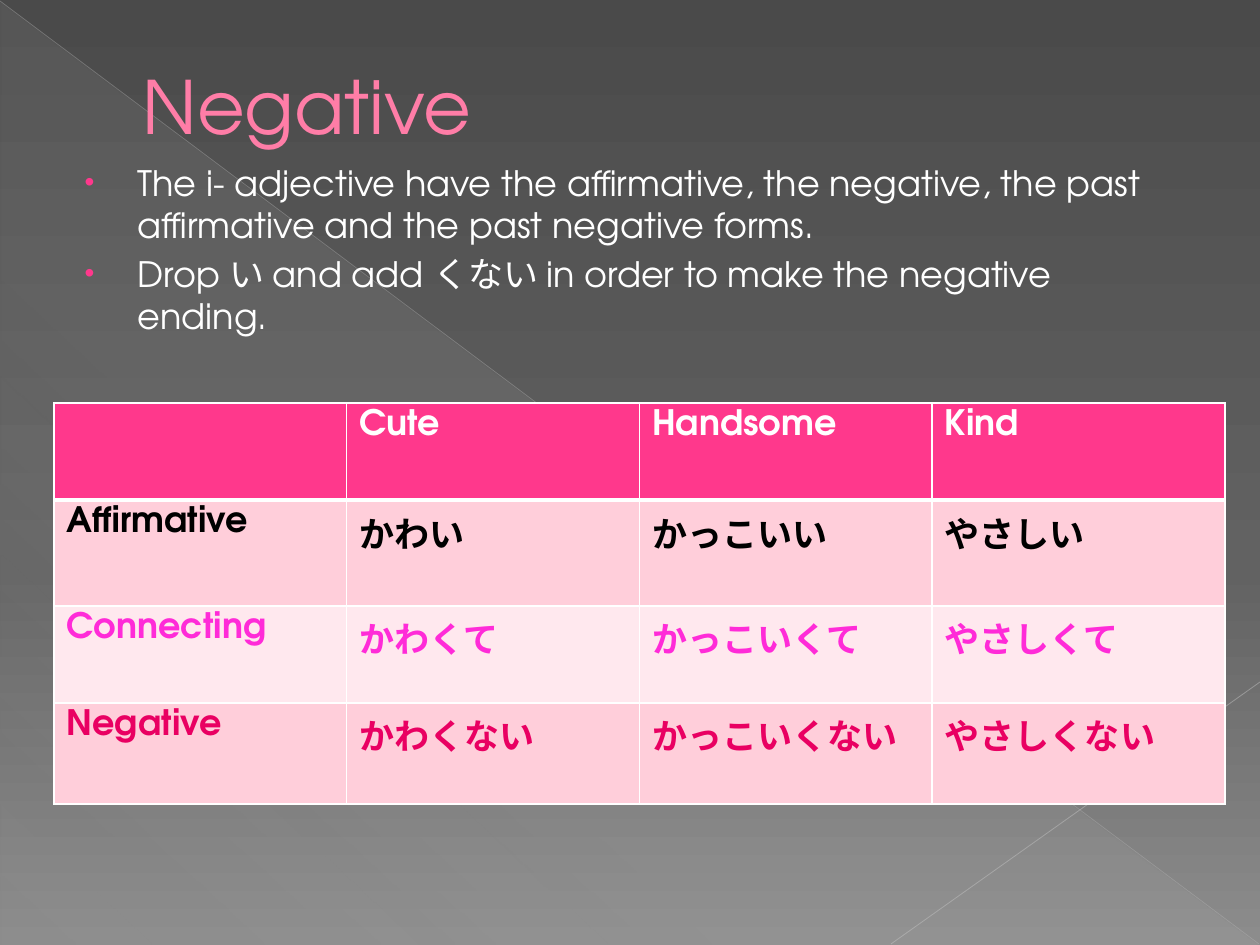
from lxml.etree import SubElement
from pptx import Presentation
from pptx.dml.color import RGBColor
from pptx.enum.shapes import MSO_CONNECTOR, MSO_SHAPE
from pptx.enum.text import MSO_ANCHOR, MSO_AUTO_SIZE, PP_ALIGN
from pptx.oxml.ns import qn
from pptx.util import Emu, Pt

SCALE = 914400 / 126
FONT = "TeX Gyre Adventor"
WHITE = RGBColor(0xFF, 0xFF, 0xFF)
BLACK = RGBColor(0x00, 0x00, 0x00)
PINK = RGBColor(0xFF, 0x38, 0x8C)
ROSE = RGBColor(0xFF, 0x7D, 0xA7)
WINE = RGBColor(0xB1, 0x27, 0x61)
BLUSH = RGBColor(0xFF, 0xCE, 0xDA)
PALE = RGBColor(0xFF, 0xE8, 0xEE)
VIOLET = RGBColor(0xFF, 0x2B, 0xD8)
RED = RGBColor(0xE9, 0x00, 0x62)
DARK = RGBColor(0x4A, 0x4A, 0x4A)
MID = RGBColor(0x62, 0x62, 0x62)
LIGHT = RGBColor(0x8C, 0x8C, 0x8C)
MIST = RGBColor(0xD2, 0xD2, 0xD2)
GREY = RGBColor(0xBF, 0xBF, 0xBF)
SILVER = RGBColor(0xC6, 0xC6, 0xC6)

POINTS = [
    "The i- adjective have the affirmative, the negative, the past "
    "affirmative and the past negative forms.",
    "Drop い and add くない in order to make the negative ending.",
]
# Each row: height, fill, text colour, cells
ROWS = [
    (97, PINK, WHITE, ["", "Cute", "Handsome", "Kind"]),
    (106, BLUSH, BLACK, ["Affirmative", "かわい", "かっこいい", "やさしい"]),
    (97, PALE, VIOLET, ["Connecting", "かわくて", "かっこいくて", "やさしくて"]),
    (101, BLUSH, RED, ["Negative", "かわくない", "かっこいくない", "やさしくない"]),
]


def px(n):
    return Emu(round(n * SCALE))


def add_tag(parent, tag, **attrs):
    return SubElement(parent, qn(tag), {k: str(v) for k, v in attrs.items()})


def add_color(parent, color, alpha=100):
    node = add_tag(parent, "a:srgbClr", val=color)
    if alpha < 100:
        add_tag(node, "a:alpha", val=alpha * 1000)


def add_line(parent, tag, color, width):
    line = add_tag(parent, tag, w=Pt(width))
    add_color(add_tag(line, "a:solidFill"), color)
    return line


def set_grad(fill, root, stops, angle):
    fill.gradient()
    grad = next(root.iter(qn("a:gradFill")))
    for child in list(grad):
        grad.remove(child)
    group = add_tag(grad, "a:gsLst")
    for spot, color, alpha in stops:
        add_color(add_tag(group, "a:gs", pos=spot * 1000), color, alpha)
    add_tag(grad, "a:lin", ang=angle * 60000, scaled=0)


def add_run(para, text, size, color, bold=False):
    run = para.add_run()
    run.text = text
    font = run.font
    font.name, font.size, font.bold = FONT, Pt(size), bold
    font.color.rgb = color
    return run


def place(shape, box):
    shape.left, shape.top, shape.width, shape.height = map(px, box)


def draw_back(slide, box):
    x, y, w, h = box
    set_grad(slide.background.fill, slide.element,
             [(0, DARK, 100), (60, MID, 100), (100, LIGHT, 100)], 90)

    # Pale corner
    corner = slide.shapes.add_shape(
        MSO_SHAPE.RIGHT_TRIANGLE, px(x + 1), px(y + 2), px(w - 2), px(h - 2))
    corner.shadow.inherit = False
    corner.line.fill.background()
    set_grad(corner.fill, corner.element,
             [(0, MIST, 10), (70, MIST, 8), (100, MIST, 1)], 133)
    parts = [corner]

    # Crossing hairlines
    for x1, y1, x2, y2, color, width, alpha in [
            (0, 1, w - 1, h - 1, GREY, 0.39, 35),
            (w, 682, 891, h - 1, SILVER, 0.47, 45)]:
        line = slide.shapes.add_connector(
            MSO_CONNECTOR.STRAIGHT, px(x + x1), px(y + y1), px(x + x2), px(y + y2))
        line.line.color.rgb = color
        line.line.width = Pt(width)
        add_tag(next(line.element.iter(qn("a:srgbClr"))), "a:alpha", val=alpha * 1000)
        add_tag(line.element.spPr, "a:effectLst")
        parts.append(line)

    # Keep the backdrop behind the placeholders
    tree = corner.element.getparent()
    for i, part in enumerate(parts):
        tree.insert(2 + i, part.element)


def fill_title(title, box):
    place(title, box)
    frame = title.text_frame
    frame.vertical_anchor = MSO_ANCHOR.MIDDLE
    frame.auto_size = MSO_AUTO_SIZE.NONE
    para = frame.paragraphs[0]
    para.alignment = PP_ALIGN.LEFT
    props = para._p.get_or_add_pPr()
    props.set("marL", str(px(67)))
    run = add_run(para, "Negative", 42, ROSE)
    font = run._r.get_or_add_rPr()
    font.insert(0, add_line(font, "a:ln", WINE, 0.5))


def fill_body(body, box):
    place(body, box)
    frame = body.text_frame
    frame.auto_size = MSO_AUTO_SIZE.NONE
    for i, text in enumerate(POINTS):
        para = frame.add_paragraph() if i else frame.paragraphs[0]
        props = para._p.get_or_add_pPr()
        props.set("marL", str(px(62)))
        props.set("indent", str(px(-53)))
        add_tag(add_tag(props, "a:spcBef"), "a:spcPct", val=20000)
        add_color(add_tag(props, "a:buClr"), PINK)
        add_tag(props, "a:buSzPct", val=80000)
        add_tag(props, "a:buChar", char="•")
        add_run(para, text, 20, WHITE)


def fill_cell(cell, text, color, fill, base):
    if text:
        add_run(cell.text_frame.paragraphs[0], text, 20, color, True)
    props = cell._tc.get_or_add_tcPr()
    for tag, width in [("a:lnL", 1), ("a:lnR", 1), ("a:lnT", 1), ("a:lnB", base)]:
        add_line(props, tag, WHITE, width)
    cell.fill.solid()
    cell.fill.fore_color.rgb = fill


def draw_table(slide, box):
    count = len(ROWS[0][3])
    table = slide.shapes.add_table(len(ROWS), count, *map(px, box)).table
    for col in table.columns:
        col.width = px(box[2] / count)
    for r, (height, fill, color, words) in enumerate(ROWS):
        table.rows[r].height = px(height)
        for c, text in enumerate(words):
            fill_cell(table.cell(r, c), text, color, fill, 1 if r else 3)


def main():
    deck = Presentation()
    deck.slide_width, deck.slide_height = px(1260), px(945)
    slide = deck.slides.add_slide(deck.slide_layouts[1])
    draw_back(slide, (0, 0, 1260, 945))
    fill_title(slide.shapes.title, (63, 37, 1134, 137))
    fill_body(slide.placeholders[1], (63, 155, 1134, 790))
    draw_table(slide, (54, 403, 1171, 401))
    deck.save("out.pptx")


if __name__ == "__main__":
    main()
